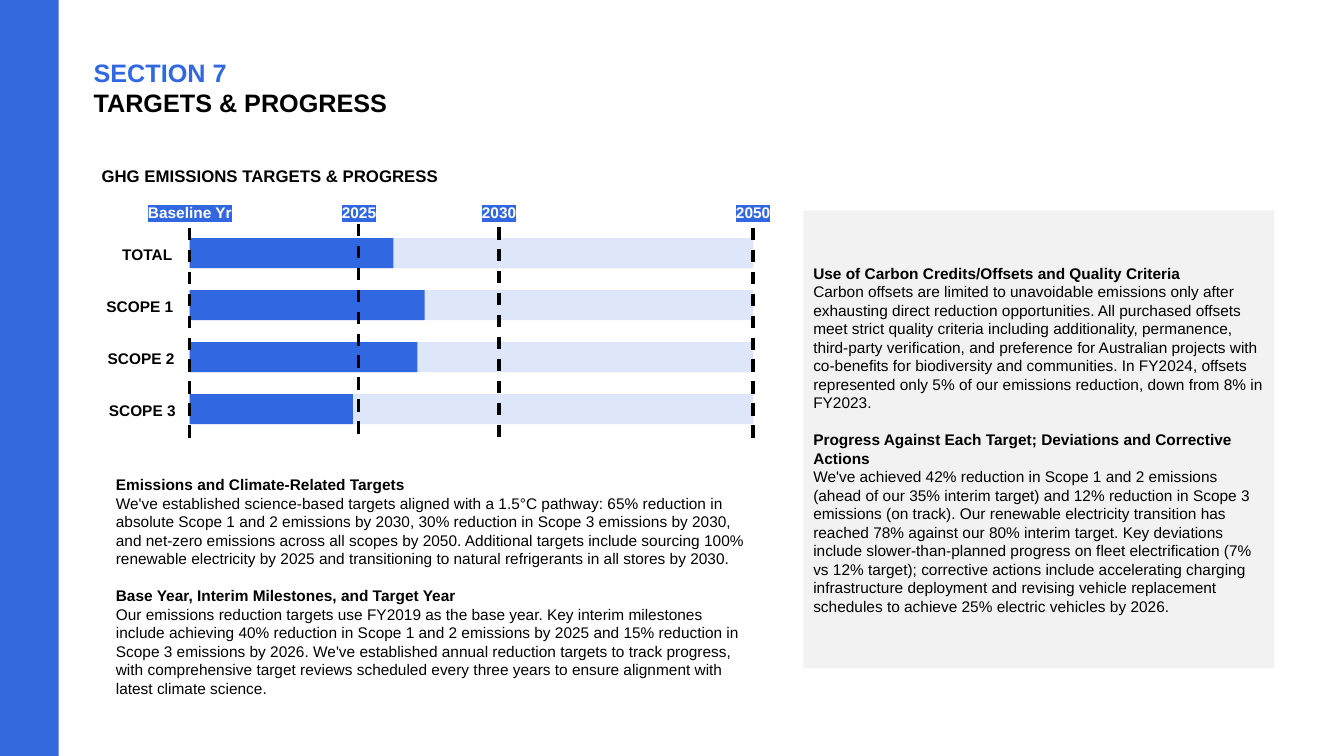
"""Build the targets and progress slide."""
from lxml import etree
from pptx import Presentation
from pptx.dml.color import RGBColor
from pptx.enum import dml, shapes, text
from pptx.oxml import ns
from pptx.util import Cm, Pt

BLUE = RGBColor(0x31, 0x68, 0xE2)
SIDE = RGBColor(0x34, 0x68, 0xDD)
PALE = RGBColor(0xDE, 0xE7, 0xFA)
GREY = RGBColor(0xF2, 0xF2, 0xF2)
BLACK = RGBColor(0, 0, 0)
WHITE = RGBColor(0xFF, 0xFF, 0xFF)
LEFT, MID, RIGHT = text.PP_ALIGN.LEFT, text.PP_ALIGN.CENTER, text.PP_ALIGN.RIGHT

deck = Presentation()
deck.slide_width, deck.slide_height = Cm(33.86), Cm(19.05)
slide = deck.slides.add_slide(deck.slide_layouts[6])
items = slide.shapes


def block(x, y, w, h, fill):
    box = items.add_shape(shapes.MSO_SHAPE.RECTANGLE, Cm(x), Cm(y), Cm(w), Cm(h))
    box.shadow.inherit = False
    box.fill.solid()
    box.fill.fore_color.rgb = fill
    box.line.fill.background()
    return box


def write(box, lines, size=11, align=LEFT, gap=0):
    frame = box.text_frame
    frame.word_wrap = True
    for i, (words, bold, color) in enumerate(lines):
        para = frame.paragraphs[0] if i == 0 else frame.add_paragraph()
        para.alignment = align
        if gap and i and bold:
            para.space_before = Pt(gap)
        run = para.add_run()
        run.text = words
        look = {"name": "Arial", "size": Pt(size), "bold": bold}
        for key, value in look.items():
            setattr(run.font, key, value)
        run.font.color.rgb = color
    return frame


block(0, 0, 1.48, 19.05, SIDE)
title = items.add_textbox(Cm(2.11), Cm(1.32), Cm(16.97), Cm(1.8))
write(title, [("SECTION 7", True, BLUE), ("TARGETS & PROGRESS", True, BLACK)], 18)
head = items.add_textbox(Cm(2.31), Cm(4.04), Cm(16.97), Cm(0.76))
write(head, [("GHG EMISSIONS TARGETS & PROGRESS", True, BLACK)], 12)

START, SPAN, TOP, STEP, THICK = 4.78, 14.2, 6, 1.31, 0.76
rows = [("TOTAL", 5.13), ("SCOPE 1", 5.92), ("SCOPE 2", 5.74), ("SCOPE 3", 4.11)]
for i, (name, done) in enumerate(rows):
    y = TOP + i * STEP
    block(START, y, SPAN, THICK, PALE)
    block(START, y, done, THICK, BLUE)
    label = items.add_textbox(Cm(2.08 + 0.03 * i), Cm(y + 0.06), Cm(2.51), Cm(0.74))
    write(label, [(name, True, BLACK)], align=RIGHT)

marks = [("Baseline Yr", 4.78, 5.74), ("2025", 9.04, 5.64),
         ("2030", 12.57, 5.72), ("2050", 18.97, 5.74)]
for name, x, y in marks:
    rule = items.add_connector(shapes.MSO_CONNECTOR.STRAIGHT,
                               Cm(x), Cm(y), Cm(x), Cm(y + 5.5))
    style = {"width": Pt(2.25), "dash_style": dml.MSO_LINE.DASH}
    for key, value in style.items():
        setattr(rule.line, key, value)
    rule.line.color.rgb = BLACK
    etree.SubElement(rule.element.spPr, ns.qn("a:effectLst"))
    label = items.add_textbox(Cm(x - 1.47), Cm(5), Cm(2.95), Cm(0.74))
    frame = write(label, [(name, True, WHITE)], align=MID)
    props = frame.paragraphs[0].runs[0].font.fill._xPr
    glow = etree.Element(ns.qn("a:highlight"))
    etree.SubElement(glow, ns.qn("a:srgbClr"), val=str(BLUE))
    props.find(ns.qn("a:solidFill")).addnext(glow)

goals = [
    ("Emissions and Climate-Related Targets", True, BLACK),
    ("We've established science-based targets aligned with a 1.5°C pathway: 65% "
     "reduction in absolute Scope 1 and 2 emissions by 2030, 30% reduction in Scope 3 "
     "emissions by 2030, and net-zero emissions across all scopes by 2050. Additional "
     "targets include sourcing 100% renewable electricity by 2025 and transitioning to "
     "natural refrigerants in all stores by 2030.", False, BLACK),
    ("Base Year, Interim Milestones, and Target Year", True, BLACK),
    ("Our emissions reduction targets use FY2019 as the base year. Key interim "
     "milestones include achieving 40% reduction in Scope 1 and 2 emissions by 2025 and "
     "15% reduction in Scope 3 emissions by 2026. We've established annual reduction "
     "targets to track progress, with comprehensive target reviews scheduled every three "
     "years to ensure alignment with latest climate science.", False, BLACK),
]
write(items.add_textbox(Cm(2.67), Cm(11.86), Cm(16.41), Cm(5.89)), goals, gap=13.2)

notes = [
    ("Use of Carbon Credits/Offsets and Quality Criteria", True, BLACK),
    ("Carbon offsets are limited to unavoidable emissions only after exhausting direct "
     "reduction opportunities. All purchased offsets meet strict quality criteria "
     "including additionality, permanence, third-party verification, and preference for "
     "Australian projects with co-benefits for biodiversity and communities. In FY2024, "
     "offsets represented only 5% of our emissions reduction, down from 8% in FY2023.",
     False, BLACK),
    ("Progress Against Each Target; Deviations and Corrective Actions", True, BLACK),
    ("We've achieved 42% reduction in Scope 1 and 2 emissions (ahead of our 35% interim "
     "target) and 12% reduction in Scope 3 emissions (on track). Our renewable "
     "electricity transition has reached 78% against our 80% interim target. Key "
     "deviations include slower-than-planned progress on fleet electrification (7% vs "
     "12% target); corrective actions include accelerating charging infrastructure "
     "deployment and revising vehicle replacement schedules to achieve 25% electric "
     "vehicles by 2026.", False, BLACK),
]
panel = block(20.24, 5.31, 11.86, 11.53, GREY)
panel.text_frame.vertical_anchor = text.MSO_ANCHOR.MIDDLE
write(panel, notes, gap=13.2)

deck.save("out.pptx")
